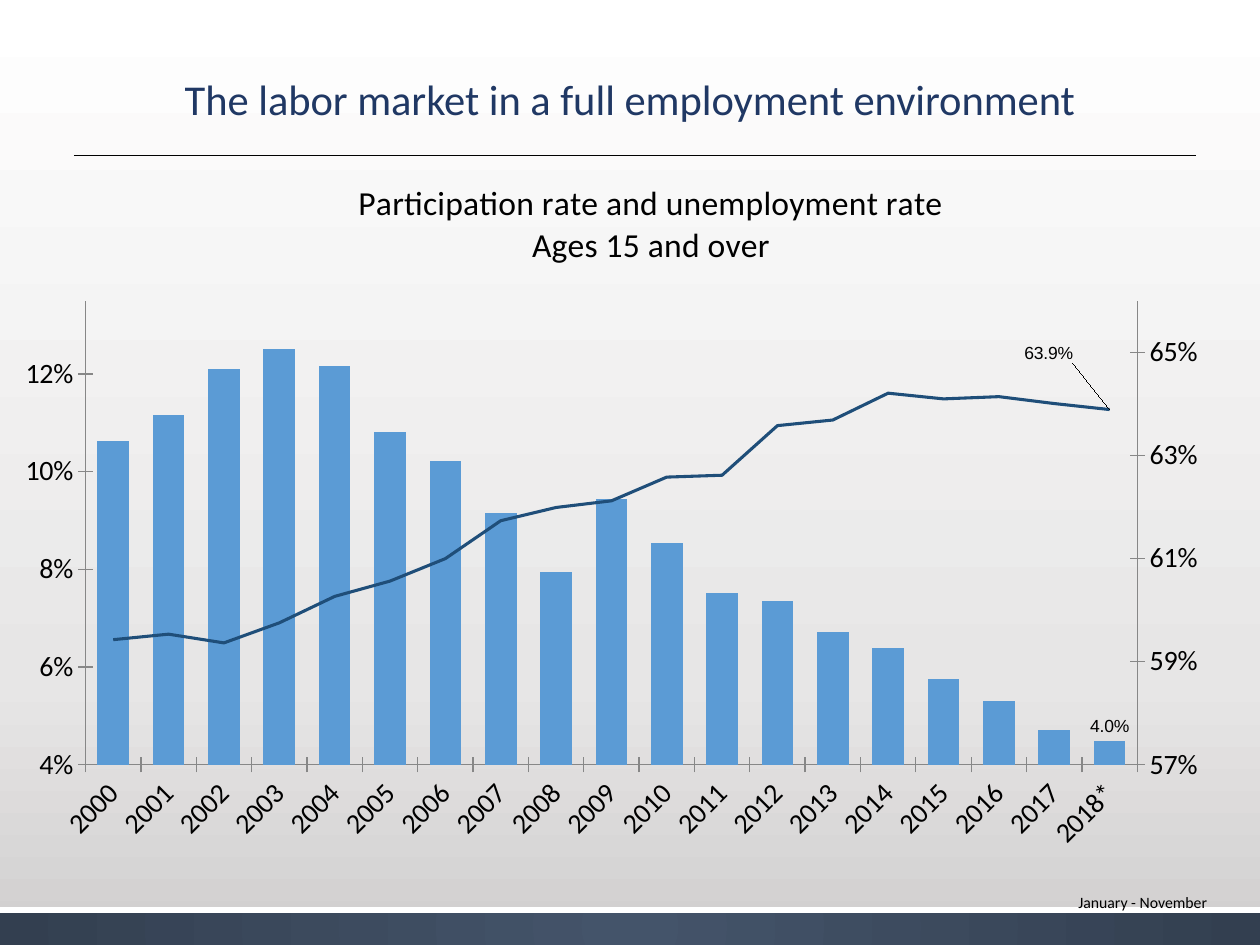
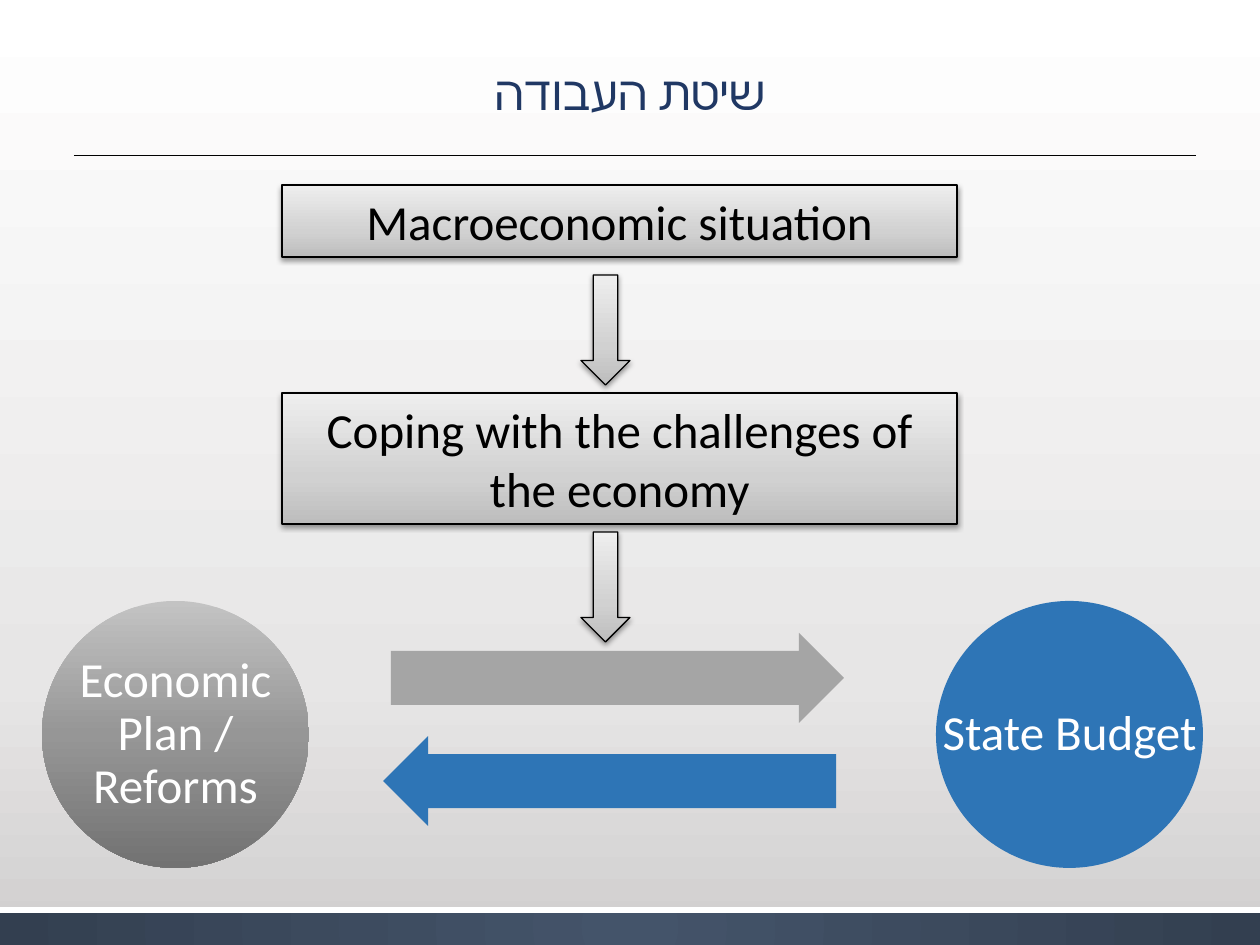
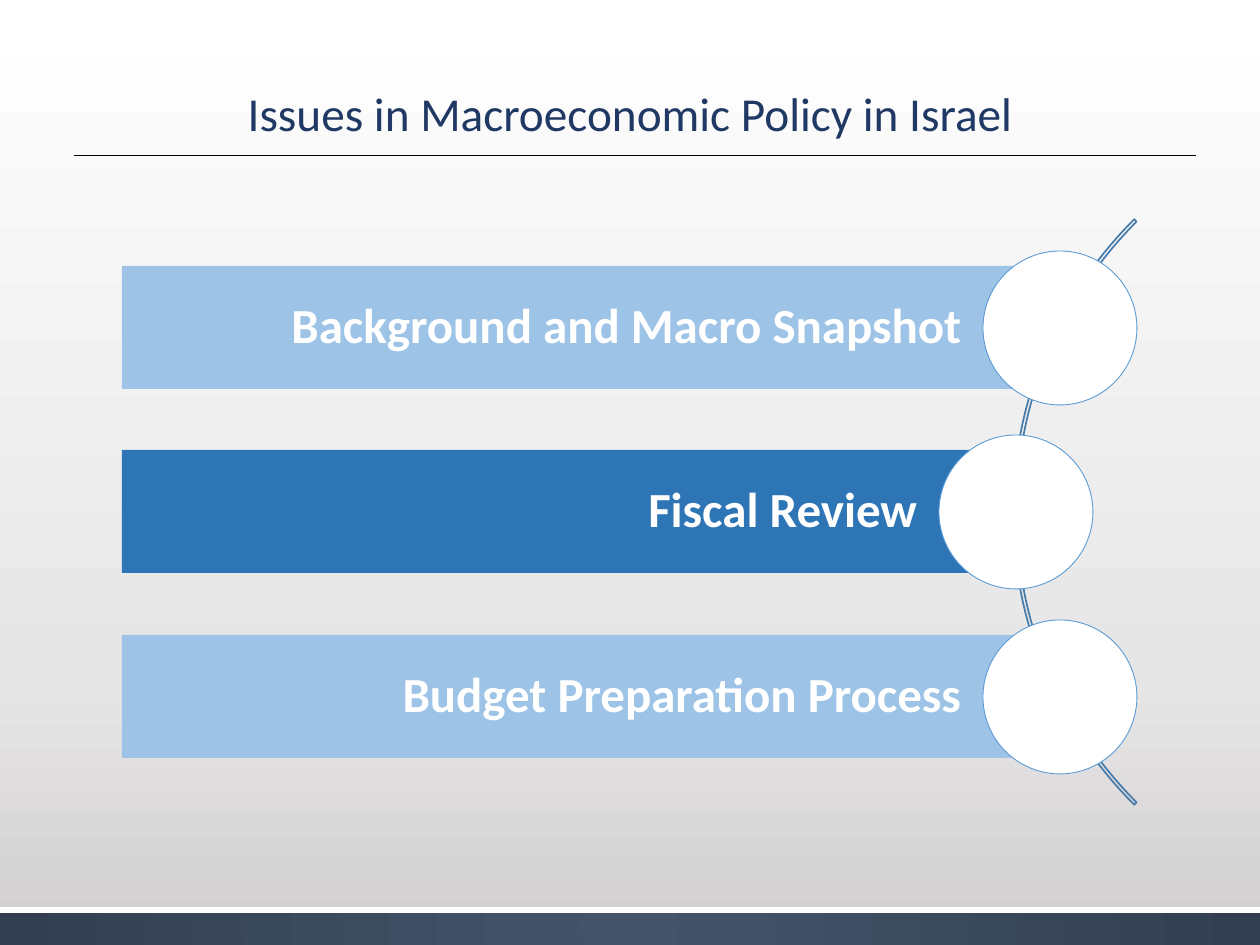
from copy import deepcopy

from lxml import etree
from pptx import Presentation
from pptx.chart.data import CategoryChartData
from pptx.dml.color import RGBColor
from pptx.enum.chart import XL_CHART_TYPE as Kind, XL_LABEL_POSITION as Spot
from pptx.enum.chart import XL_MARKER_STYLE as Mark, XL_TICK_MARK as Tick
from pptx.enum.shapes import MSO_CONNECTOR as Link, MSO_SHAPE as Geom
from pptx.enum.text import MSO_ANCHOR as Anchor, PP_ALIGN as Align
from pptx.oxml.ns import qn
from pptx.util import Pt

SCALE = 914400 / 126
FONT = "Calibri"
HUES = {
    "black": "000000", "white": "FFFFFF", "navy": "203864", "blue": "2E75B6",
    "sky": "5B9BD5", "pale": "9DC3E6", "deep": "1F4E79", "steel": "497CAB",
    "grey": "A5A5A5", "axis": "878787",
}
PAGE = [(0, "FFFFFF"), (72, "E7E6E6"), (100, "D0CECE")]
BAND = [(0, "44546A"), (100, "333F50")]
PANEL = [(0, "BDBDBD"), (35, "D1D1D1"), (100, "EEEEEE")]
BALL = [(0, "C3C3C3"), (50, "969696"), (100, "727272")]

YEARS = [str(year) for year in range(2000, 2018)] + ["2018*"]
JOBLESS = [
    0.101373, 0.10667, 0.115909, 0.120029, 0.116603, 0.103016, 0.097214,
    0.086522, 0.07448, 0.089382, 0.080438, 0.070252, 0.068513, 0.062083,
    0.058902, 0.052508, 0.04798, 0.04215, 0.039785,
]
ACTIVE = [
    0.59426, 0.595324, 0.593636, 0.597517, 0.602644, 0.605614, 0.609975,
    0.617321, 0.619899, 0.621179, 0.625779, 0.626145, 0.635762, 0.636845,
    0.642054, 0.640941, 0.641379, 0.640044, 0.638874,
]


def px(num):
    return round(num * SCALE)


def emu(box):
    return [px(num) for num in box]


def hue(name):
    return RGBColor.from_string(HUES[name])


def add(parent, tag, **attrs):
    """Append an XML child with the given attributes."""
    node = etree.SubElement(parent, qn(tag))
    for key, val in attrs.items():
        node.set(key, str(val))
    return node


def blend(owner, fill, stops, angle=None):
    """Fill with a gradient: linear at an angle, or from the centre out."""
    fill.gradient()
    grad = next(owner.element.iter(qn("a:gradFill")))
    grad.clear()
    row = add(grad, "a:gsLst")
    for pos, color in stops:
        add(add(row, "a:gs", pos=pos * 1000), "a:srgbClr", val=color)
    if angle is None:
        way = add(grad, "a:path", path="circle")
        add(way, "a:fillToRect", **dict.fromkeys("ltrb", 50000))
    else:
        add(grad, "a:lin", ang=angle * 60000, scaled=0)


def draw(slide, geom, box, fill=None, line=None, width=0.75, angle=None):
    """Add a preset shape; fill is a colour name, gradient stops or None."""
    shape = slide.shapes.add_shape(geom, *emu(box))
    shape.shadow.inherit = False
    if fill is None:
        shape.fill.background()
    elif isinstance(fill, list):
        blend(shape, shape.fill, fill, angle)
    else:
        shape.fill.solid()
        shape.fill.fore_color.rgb = hue(fill)
    if line:
        shape.line.color.rgb = hue(line)
        shape.line.width = Pt(width)
    else:
        shape.line.fill.background()
    return shape


def write(shape, text, size, color, align=Align.CENTER, anchor=Anchor.MIDDLE,
          space=0.9, bold=False, pads=(13, 6, 13, 6)):
    """Set right-to-left text; pads are left, top, right, bottom."""
    frame = shape.text_frame
    look = dict(zip(("margin_left", "margin_top", "margin_right",
                     "margin_bottom"), emu(pads)))
    look.update(word_wrap=True, vertical_anchor=anchor)
    for key, val in look.items():
        setattr(frame, key, val)
    para = frame.paragraphs[0]
    para.alignment, para.line_spacing = align, space
    run = para.add_run()
    run.text = text
    for key, val in dict(name=FONT, size=Pt(size), bold=bold).items():
        setattr(run.font, key, val)
    run.font.color.rgb = hue(color)
    for node in shape.element.iter(qn("a:pPr")):
        node.set("rtl", "1")
    for node in shape.element.iter(qn("a:rPr")):
        add(node, "a:cs", typeface=FONT)


def label(slide, box, text, size, color, **look):
    write(slide.shapes.add_textbox(*emu(box)), text, size, color, **look)


def dress(master, slide):
    """Draw the shared parts on a slide and move them to the master."""
    blend(master, master.background.fill, PAGE, 90)
    band = draw(slide, Geom.RECTANGLE, (0, 908, 1260, 37), BAND)
    strip = draw(slide, Geom.RECTANGLE, (0, 907, 1260, 6), "white")
    rule = slide.shapes.add_connector(Link.STRAIGHT, *emu((74, 155, 1196, 155)))
    rule.line.color.rgb = hue("black")
    rule.line.width = Pt(0.5)
    add(rule.element.spPr, "a:effectLst")
    for part in (band, strip, rule):
        master.shapes.element.append(part.element)


def place(node, spot, **vals):
    """Give a chart part a manual layout as its child number spot."""
    old = node.find(qn("c:layout"))
    if old is not None:
        node.remove(old)
    layout = etree.Element(qn("c:layout"))
    manual = add(layout, "c:manualLayout")
    for key, val in vals.items():
        add(manual, f"c:{key}", val=val)
    node.insert(spot, layout)


def style_axes(chart):
    cat, val = chart.category_axis, chart.value_axis
    for axis in (cat, val):
        axis.has_major_gridlines = False
        axis.major_tick_mark = Tick.CROSS
        axis.format.line.color.rgb = hue("axis")
        axis.tick_labels.font.size = Pt(16)
    for key, num in dict(minimum_scale=0.035, maximum_scale=0.13,
                         major_unit=0.02).items():
        setattr(val, key, num)
    val.tick_labels.number_format = "0%"
    val.tick_labels.number_format_is_linked = False
    body = next(cat.format.line and chart.element.iter(qn("c:catAx")))
    body.find(qn("c:txPr")).find(qn("a:bodyPr")).set("rot", "-2700000")


def split(chart):
    """Move the second series to a line plot on a right-hand axis."""
    area = next(chart.element.iter(qn("c:plotArea")))
    bars = area.find(qn("c:barChart"))
    series = bars.findall(qn("c:ser"))[1]
    for node in series.findall(qn("c:invertIfNegative")):
        series.remove(node)
    lines = etree.Element(qn("c:lineChart"))
    add(lines, "c:grouping", val="standard")
    add(lines, "c:varyColors", val=0)
    lines.append(series)
    add(lines, "c:marker", val=1)
    for num in (50, 60):
        add(lines, "c:axId", val=num)
    bars.addnext(lines)

    cat, val = area.find(qn("c:catAx")), area.find(qn("c:valAx"))
    changes = (
        (cat, dict(axId=50, crossAx=60, delete=1)),
        (val, dict(axId=60, crossAx=50, axPos="r", crosses="max",
                   min=0.57, max=0.66)),
    )
    last = val
    for axis, vals in changes:
        twin = deepcopy(axis)
        for key, num in vals.items():
            next(twin.iter(qn(f"c:{key}"))).set("val", str(num))
        last.addnext(twin)
        last = twin
    place(area, 0, layoutTarget="inner", xMode="edge", yMode="edge",
          x=0.07, y=0.19, w=0.86, h=0.67)


def head(chart, rows):
    chart.has_title = True
    frame = chart.chart_title.text_frame
    frame.text = "\n".join(rows)
    for para in frame.paragraphs:
        para.alignment = Align.CENTER
        for key, val in dict(name=FONT, size=Pt(19.2), bold=False).items():
            setattr(para.runs[0].font, key, val)
        para.runs[0].font.color.rgb = hue("black")
    node = next(chart.element.iter(qn("c:title")))
    place(node, 1, xMode="edge", yMode="edge", x=0.29, y=0.01)
    node.find(qn("c:overlay")).set("val", "1")


def tag_last(series, spot):
    """Show the value of the last point only."""
    series.data_labels.show_value = False
    note = series.points[len(YEARS) - 1].data_label
    note.font.size, note.font.name = Pt(10), "Arial"
    note.position = spot


def rates(slide, box):
    data = CategoryChartData(number_format="0.0%")
    data.categories = YEARS
    data.add_series("Series 1", JOBLESS)
    data.add_series("Series 2", ACTIVE)
    chart = slide.shapes.add_chart(Kind.COLUMN_CLUSTERED, *emu(box), data).chart
    chart.has_legend = False
    chart.font.name, chart.font.size = FONT, Pt(16)
    chart.font.color.rgb = hue("black")
    style_axes(chart)
    split(chart)
    head(chart, ("Participation rate and unemployment rate",
                 "Ages 15 and over"))

    bars, lines = chart.plots
    bars.gap_width, bars.vary_by_categories = 75, False
    bar, line = bars.series[0], lines.series[0]
    bar.format.fill.solid()
    bar.format.fill.fore_color.rgb = hue("sky")
    line.format.line.color.rgb = hue("deep")
    line.format.line.width = Pt(1.75)
    line.marker.style, line.smooth = Mark.NONE, False
    tag_last(bar, Spot.OUTSIDE_END)
    tag_last(line, Spot.ABOVE)
    note = list(chart.element.iter(qn("c:dLbl")))[-1]
    place(note, 1, x=-0.05, y=-0.06)


def steps(slide, box):
    """Two panels, each with an arrow down from it."""
    left, top, wide, _ = box
    rows = (
        ("Macroeconomic situation", 0, 72, 90),
        ("Coping with the challenges of the economy", 208, 131, 347),
    )
    for text, drop, tall, tip in rows:
        panel = draw(slide, Geom.RECTANGLE, (left, top + drop, wide, tall),
                     PANEL, "black", angle=270)
        write(panel, text, 28, "black", space=1)
        arrow = draw(slide, Geom.DOWN_ARROW, (left + 299, top + tip, 49, 110),
                     PANEL, "black", angle=270)
        for part in (panel, arrow):
            glow = add(part.element.spPr.find(qn("a:effectLst")),
                       "a:outerShdw", blurRad=Pt(3.1), dist=Pt(1.6),
                       dir=5400000, rotWithShape=0)
            add(add(glow, "a:srgbClr", val=HUES["black"]), "a:alpha", val=38000)


def cycle(slide, box):
    """Two balls with an arrow each way between them."""
    left, top, wide, size = box
    balls = (
        ("Economic Plan / Reforms", left, BALL),
        ("State Budget", left + wide - size, "blue"),
    )
    for text, x, fill in balls:
        spot = (x, top, size, size)
        draw(slide, Geom.OVAL, spot, fill, angle=90)
        label(slide, spot, text, 28, "white", pads=(5, 5, 5, 5))
    for x, y, fill, turn in ((349, 32, "grey", 0), (341, 135, "blue", 180)):
        arrow = draw(slide, Geom.RIGHT_ARROW, (left + x, top + y, 453, 90), fill)
        arrow.adjustments[0], arrow.adjustments[1] = 0.6, 0.5
        arrow.rotation = turn


def topics(slide, box):
    """Bars that end in discs set along an arc."""
    left, top, wide, tall = box
    arc = draw(slide, Geom.BLOCK_ARC, (left + 891, top - 168, 828, 828),
               line="steel", width=1)
    for num, val in enumerate((81, 135, 0.004)):
        arc.adjustments[num] = val
    bar, disc = 123, 154
    rows = (
        ("Background and Macro Snapshot", "pale", 0),
        ("Fiscal Review", "blue", 44),
        ("Budget Preparation Process", "pale", 0),
    )
    for num, (text, fill, cut) in enumerate(rows):
        y = top + num * (tall - bar) // 2
        end = left + wide - cut
        strip = draw(slide, Geom.RECTANGLE, (left, y, end - left, bar), fill)
        write(strip, text, 28, "white", align=Align.RIGHT, bold=True,
              pads=(10, 10, 98, 10))
        draw(slide, Geom.OVAL,
             (end + 1 - disc // 2, y - (disc - bar) // 2, disc, disc),
             "white", "sky", 0.5)


def main():
    prs = Presentation()
    prs.slide_width, prs.slide_height = emu((1260, 945))
    blank = prs.slide_layouts[6]
    market, method, issues = [prs.slides.add_slide(blank) for _ in range(3)]
    dress(prs.slide_master, market)

    titles = (
        (market, (139, 48, 982, 108), 24.3,
         "The labor market in a full employment environment"),
        (method, (63, 16, 1134, 158), 27, "שיטת העבודה"),
        (issues, (63, 37, 1134, 158), 27,
         "Issues in Macroeconomic Policy in Israel"),
    )
    for slide, box, size, text in titles:
        label(slide, box, text, size, "navy")

    rates(market, (0, 169, 1223, 693))
    label(market, (513, 852, 707, 66), "January - November", 9, "black",
          align=Align.RIGHT, anchor=Anchor.BOTTOM, space=1)
    cycle(method, (42, 601, 1161, 267))
    steps(method, (282, 185, 675, 457))
    topics(issues, (122, 266, 937, 492))
    prs.save("out.pptx")


if __name__ == "__main__":
    main()
